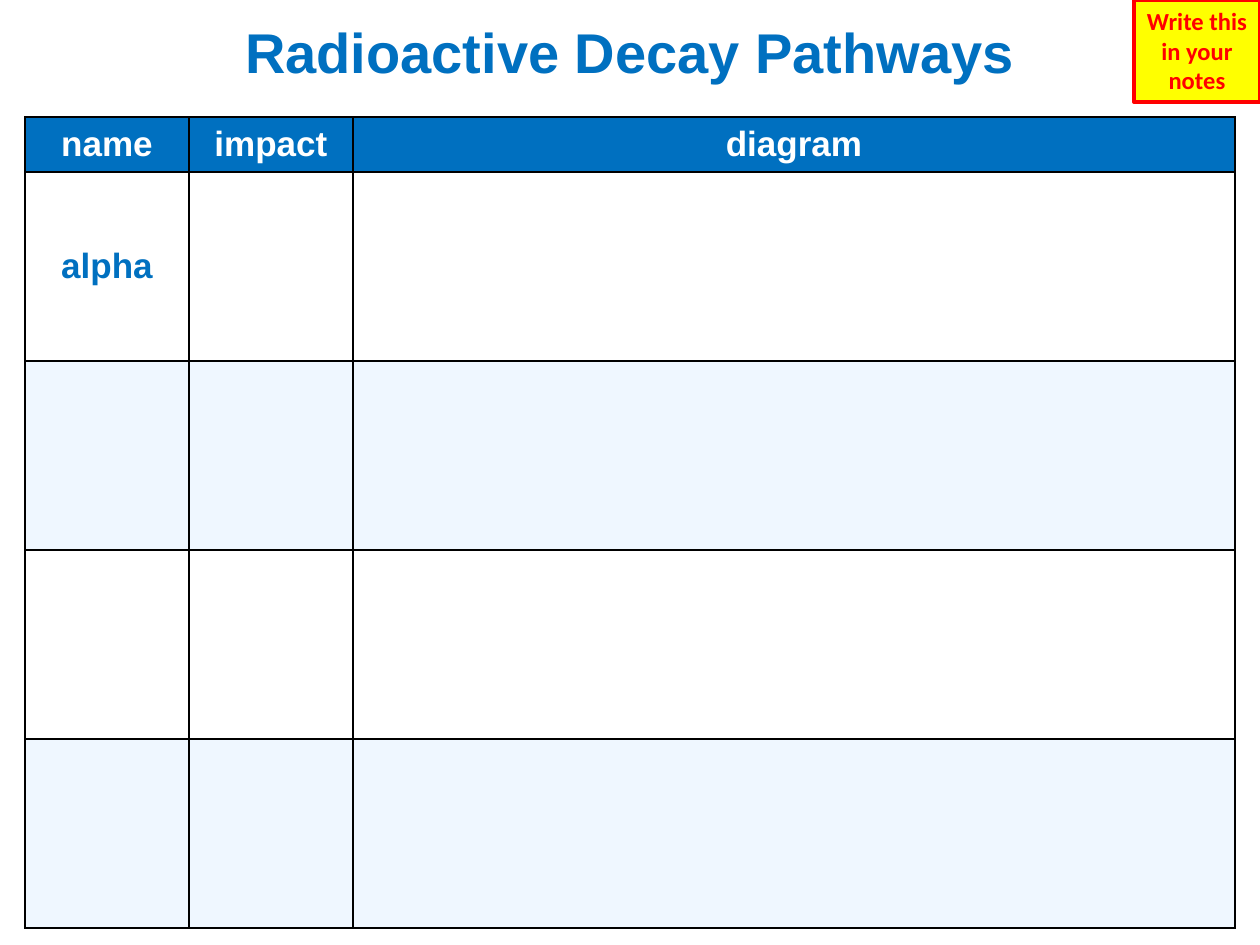
from lxml import etree
from pptx import Presentation
from pptx.dml.color import RGBColor
from pptx.enum.shapes import MSO_SHAPE
from pptx.enum.text import MSO_ANCHOR, PP_ALIGN
from pptx.oxml.ns import qn
from pptx.util import Emu, Pt

RECTANGLE = MSO_SHAPE.RECTANGLE
TOP, MIDDLE = MSO_ANCHOR.TOP, MSO_ANCHOR.MIDDLE
CENTER = PP_ALIGN.CENTER
EMU_PER_PX = 914400 / 126

COLORS = {
    "blue": "0070C0",
    "pale": "EFF7FF",
    "white": "FFFFFF",
    "black": "000000",
    "yellow": "FFFF00",
    "red": "FF0000",
}
COLUMN_WIDTHS = [164, 164, 882]
ROW_HEIGHTS = [101, 55] + [189] * 4
TITLE = "Radioactive Decay Pathways"
HEADINGS = ["name", "impact", "diagram"]
BODY_ROWS = [["alpha", "", ""]] + [["", "", ""]] * 3


def px(length):
    return Emu(round(length * EMU_PER_PX))


def color(name):
    return RGBColor.from_string(COLORS[name])


def write(frame, text, size, ink, font="Arial"):
    frame.text = text
    para = frame.paragraphs[0]
    para.alignment = CENTER
    for span in para.runs:
        span.font.name = font
        span.font.size = Pt(size)
        span.font.bold = True
        span.font.color.rgb = color(ink)


def set_borders(cell, drawn_sides):
    properties = cell._tc.get_or_add_tcPr()
    for side in "LRTB":
        line = etree.SubElement(properties, qn(f"a:ln{side}"), w=str(Pt(1)))
        if side in drawn_sides:
            fill = etree.SubElement(line, qn("a:solidFill"))
            etree.SubElement(fill, qn("a:srgbClr"), val=COLORS["black"])
        else:
            etree.SubElement(line, qn("a:noFill"))


def format_cell(cell, text, size, ink, background=None, sides="LRTB", anchor=MIDDLE):
    set_borders(cell, sides)
    if background:
        cell.fill.solid()
        cell.fill.fore_color.rgb = color(background)
    else:
        cell.fill.background()
    cell.vertical_anchor = anchor
    if text:
        write(cell.text_frame, text, size, ink)


def add_pathway_table(page):
    frame = page.shapes.add_table(
        len(ROW_HEIGHTS), len(COLUMN_WIDTHS), px(25), px(16),
        px(sum(COLUMN_WIDTHS)), px(sum(ROW_HEIGHTS)))
    table = frame.table
    table.first_row = table.horz_banding = False
    for column, width in zip(table.columns, COLUMN_WIDTHS):
        column.width = px(width)
    for row, height in zip(table.rows, ROW_HEIGHTS):
        row.height = px(height)

    # Title across the whole top row
    table.cell(0, 0).merge(table.cell(0, len(COLUMN_WIDTHS) - 1))
    for column, text in enumerate([TITLE, "", ""]):
        format_cell(table.cell(0, column), text, 32, "blue", sides="B", anchor=TOP)

    # Column headings
    for column, text in enumerate(HEADINGS):
        format_cell(table.cell(1, column), text, 20, "white", "blue")

    # Banded body rows
    for index, texts in enumerate(BODY_ROWS):
        background = "pale" if index % 2 else "white"
        for column, text in enumerate(texts):
            format_cell(table.cell(index + 2, column), text, 20, "blue", background)


def add_note_box(page):
    box = page.shapes.add_shape(RECTANGLE, px(1134), px(0), px(126), px(102))
    box.shadow.inherit = False
    box.fill.solid()
    box.fill.fore_color.rgb = color("yellow")
    box.line.color.rgb = color("red")
    box.line.width = Pt(2.25)
    box.text_frame.word_wrap = True
    box.text_frame.vertical_anchor = TOP
    write(box.text_frame, "Write this in your notes", 14, "red", "Calibri")


def main():
    deck = Presentation()
    deck.slide_width, deck.slide_height = px(1260), px(945)
    page = deck.slides.add_slide(deck.slide_layouts[6])
    add_pathway_table(page)
    add_note_box(page)
    deck.save("out.pptx")


if __name__ == "__main__":
    main()
